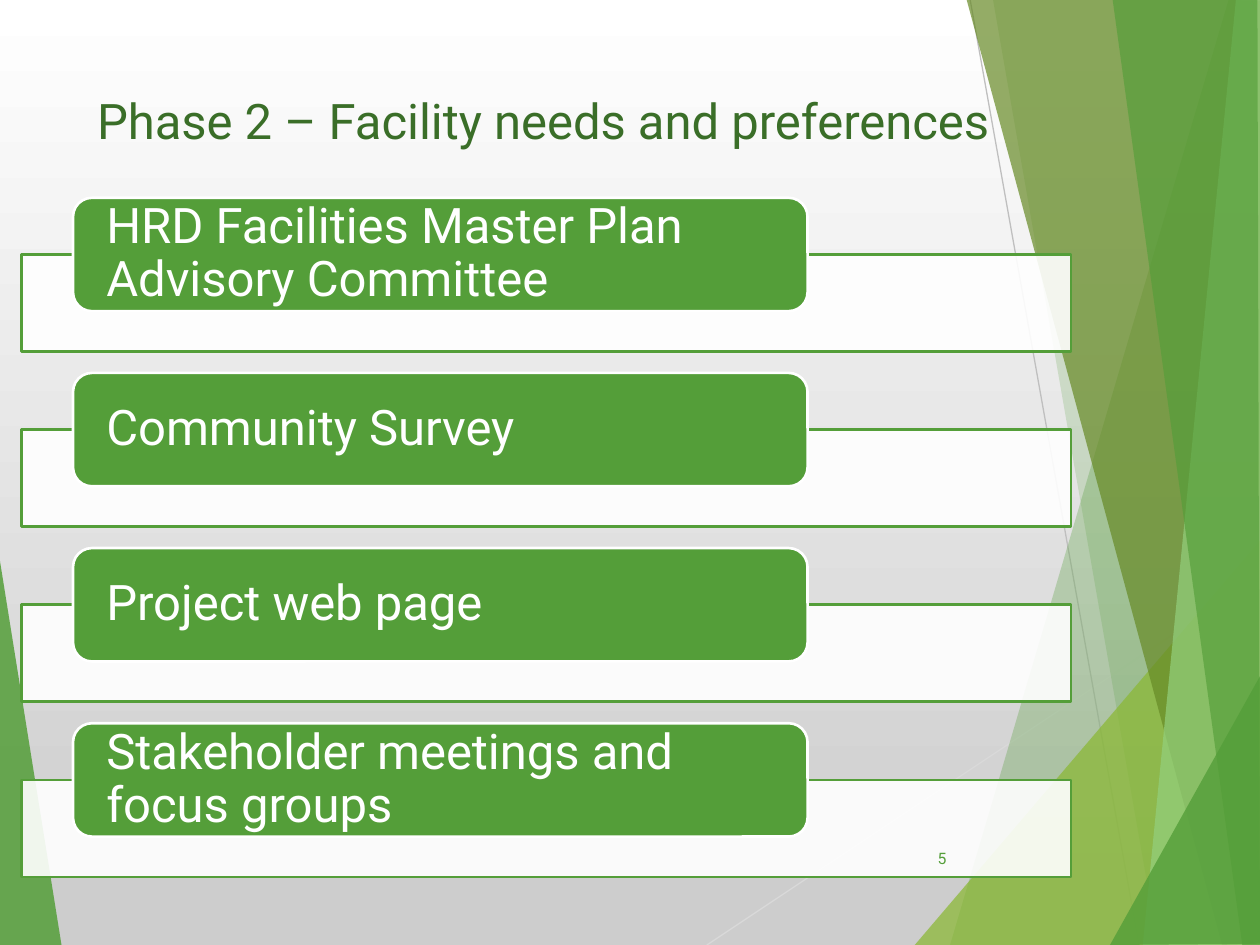
import pptx
import pptx.dml.color
import pptx.enum.shapes
import pptx.enum.text
import pptx.oxml
import pptx.oxml.ns
import pptx.util

Inches = pptx.util.Inches
Pt = pptx.util.Pt
RGBColor = pptx.dml.color.RGBColor
SHAPE = pptx.enum.shapes.MSO_SHAPE
ANCHOR = pptx.enum.text.MSO_ANCHOR
ALIGN = pptx.enum.text.PP_ALIGN

FONT = "Roboto"
WHITE = RGBColor(0xFF, 0xFF, 0xFF)
GRAY = RGBColor(0xCD, 0xCD, 0xCD)
LIGHT_LINE = RGBColor(0xD9, 0xD9, 0xD9)
MID_LINE = RGBColor(0xBF, 0xBF, 0xBF)
GREEN = RGBColor(0x54, 0x9E, 0x39)
DARK_GREEN = RGBColor(0x3A, 0x6E, 0x28)
LIME = RGBColor(0x8A, 0xB8, 0x33)
OLIVE = RGBColor(0x67, 0x8A, 0x26)
PALE_GREEN = RGBColor(0x93, 0xD0, 0x7D)

LEFT_FACET = ([(-0.01, 4.39), (0.49, 7.51), (-0.01, 7.5)], GREEN, 85)
RIGHT_FACETS = [
    ([(9.75, 0), (7.54, 7.5), (10.02, 7.51), (10.01, 0.01)], GREEN, 30),
    ([(7.88, -0.01), (9.19, 7.5), (10.01, 7.5), (10.01, -0.01)], GREEN, 20),
    ([(7.26, 7.5), (10, 4.29), (10.01, 7.5)], LIME, 72),
    ([(7.67, -0.01), (9.7, 7.5), (10.01, 7.49), (10.01, -0.01)], OLIVE, 70),
    ([(9.81, -0.01), (9.07, 7.5), (10.01, 7.5), (10, -0.01)], PALE_GREEN, 70),
    ([(8.83, -0.01), (9.86, 7.5), (10, 7.5), (9.98, -0.01)], GREEN, 65),
    ([(8.81, 7.5), (10.01, 5.35), (10.01, 7.49)], GREEN, 80),
]
ITEMS = [
    "HRD Facilities Master Plan Advisory Committee",
    "Community Survey",
    "Project web page",
    "Stakeholder meetings and focus groups",
]
ROW_TOP = 1.57
ROW_STEP = 1.39


def set_background(s):
    fill = s.background.fill
    fill.gradient()
    fill.gradient_angle = 270
    for stop, position, color in zip(fill.gradient_stops, (0, 0.94), (WHITE, GRAY)):
        stop.position = position
        stop.color.rgb = color


def set_fill(sp, color, opacity=100):
    sp.shadow.inherit = False
    sp.fill.solid()
    sp.fill.fore_color.rgb = color
    if opacity < 100:
        clr = sp.fill._xPr.find(".//" + pptx.oxml.ns.qn("a:srgbClr"))
        alpha = pptx.oxml.parse_xml(
            f'<a:alpha {pptx.oxml.ns.nsdecls("a")} val="{opacity * 1000}"/>'
        )
        clr.append(alpha)


def add_facet(s, points, color, opacity):
    corners = [(Inches(x), Inches(y)) for x, y in points]
    builder = s.shapes.build_freeform(*corners[0])
    builder.add_line_segments(corners[1:], close=True)
    sp = builder.convert_to_shape()
    set_fill(sp, color, opacity)
    sp.line.fill.background()


def add_line(s, x1, y1, x2, y2, color):
    line = s.shapes.add_connector(
        pptx.enum.shapes.MSO_CONNECTOR.STRAIGHT,
        Inches(x1), Inches(y1), Inches(x2), Inches(y2),
    )
    line.line.color.rgb = color
    line.line.width = Pt(0.75)
    effects = pptx.oxml.parse_xml(f'<a:effectLst {pptx.oxml.ns.nsdecls("a")}/>')
    line._element.spPr.append(effects)


def add_box(s, kind, x, y, w, h, color, line_color, opacity=100):
    sp = s.shapes.add_shape(kind, Inches(x), Inches(y), Inches(w), Inches(h))
    set_fill(sp, color, opacity)
    sp.line.color.rgb = line_color
    sp.line.width = Pt(1.5)
    return sp


def write(sp, text, size, color, align=ALIGN.LEFT, anchor=ANCHOR.MIDDLE):
    tf = sp.text_frame
    tf.word_wrap = True
    tf.vertical_anchor = anchor
    p = tf.paragraphs[0]
    p.alignment = align
    r = p.add_run()
    r.text = text
    r.font.name = FONT
    r.font.size = Pt(size)
    r.font.color.rgb = color
    return tf


def add_title(s, text):
    sp = s.shapes.title
    sp.left, sp.top = Inches(0.67), Inches(0.67)
    sp.width, sp.height = Inches(7.33), Inches(0.67)
    write(sp, text, 28, DARK_GREEN, anchor=ANCHOR.TOP)


def add_item(s, text, top):
    add_box(s, SHAPE.RECTANGLE, 0.17, top + 0.45, 8.33, 0.77, WHITE, GREEN, 90)
    sp = add_box(s, SHAPE.ROUNDED_RECTANGLE, 0.58, top, 5.83, 0.9, GREEN, WHITE)
    tf = write(sp, text, 28, WHITE)
    tf.margin_left = tf.margin_right = Inches(0.22)
    tf.margin_top = tf.margin_bottom = 0
    tf.paragraphs[0].line_spacing = 0.9


def add_slide_number(s, number):
    sp = s.shapes.add_textbox(Inches(7.05), Inches(6.61), Inches(0.56), Inches(0.4))
    write(sp, number, 9, GREEN, ALIGN.RIGHT)


def main():
    prs = pptx.Presentation()
    prs.slide_width, prs.slide_height = Inches(10), Inches(7.5)
    s = prs.slides.add_slide(prs.slide_layouts[5])
    set_background(s)
    add_facet(s, *LEFT_FACET)
    add_line(s, 5.61, 7.5, 10.01, 4.57, LIGHT_LINE)
    add_line(s, 7.7, 0, 9.04, 7.5, MID_LINE)
    for facet in RIGHT_FACETS:
        add_facet(s, *facet)
    add_title(s, "Phase 2 – Facility needs and preferences")
    for i, text in enumerate(ITEMS):
        add_item(s, text, ROW_TOP + i * ROW_STEP)
    add_slide_number(s, "5")
    prs.save("out.pptx")


if __name__ == "__main__":
    main()
